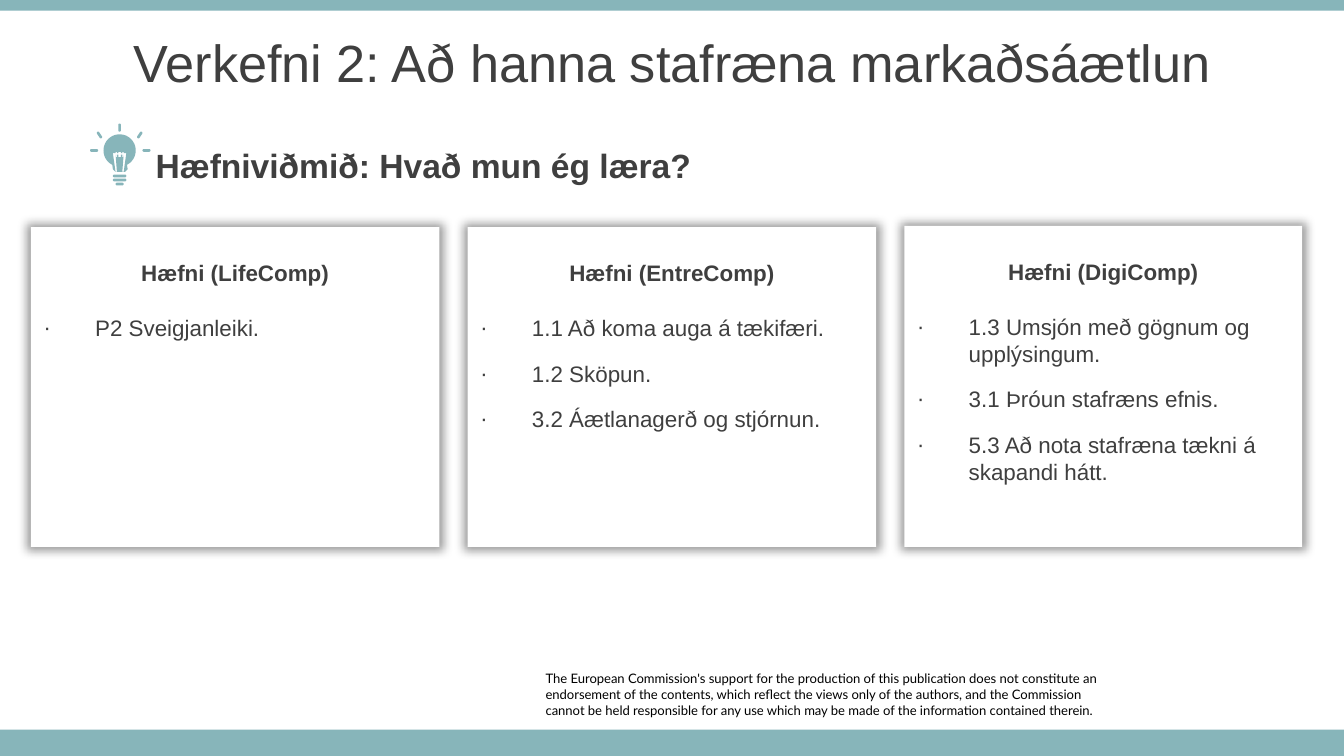
import math

from lxml import etree
from pptx import Presentation
from pptx.dml.color import RGBColor
from pptx.enum import shapes, text
from pptx.oxml.ns import qn
from pptx.util import Inches, Pt

TEAL, DARK, WHITE, BLACK = "87B5BA", "3F3F3F", "FFFFFF", "000000"
TITLE = "Verkefni 2: Að hanna stafræna markaðsáætlun"
SUBTITLE = "Hæfniviðmið: Hvað mun ég læra?"
DISCLAIMER = [
    "The European Commission's support for the production of this publication does not "
    "constitute an endorsement of the contents, which reflect the views only of the "
    "authors, and the Commission",
    "cannot be held responsible for any use which may be made of the information "
    "contained therein.",
]
CARDS = [
    ((0.23, 1.69, 3.04, 2.38), "Hæfni (LifeComp)", ["P2 Sveigjanleiki."]),
    ((3.48, 1.69, 3.04, 2.38), "Hæfni (EntreComp)",
     ["1.1 Að koma auga á tækifæri.", "1.2 Sköpun.", "3.2 Áætlanagerð og stjórnun."]),
    ((6.73, 1.68, 2.96, 2.39), "Hæfni (DigiComp)",
     ["1.3 Umsjón með gögnum og upplýsingum.", "3.1 Þróun stafræns efnis.",
      "5.3 Að nota stafræna tækni á skapandi hátt."]),
]
BARS = [(0, 5.43, 10, 0.2), (0, 0, 10, 0.08)]

# Light bulb, in slide inches
AXIS, BULB_Y, BULB_R = 0.89, 1.12, 0.12
STROKES = [  # rays, then the rings of the base
    (0.68, 1.12, 0.72, 1.12), (1.07, 1.12, 1.11, 1.12), (0.89, 0.93, 0.89, 0.97),
    (0.73, 0.99, 0.75, 1.02), (1.05, 0.99, 1.03, 1.02),
    (0.85, 1.31, 0.93, 1.31), (0.85, 1.34, 0.93, 1.34), (0.87, 1.37, 0.91, 1.37),
]
NECK = [(0.95, 1.26), (0.93, 1.28), (0.86, 1.28), (0.84, 1.26)]
FILAMENT = [  # one half: distance from the axis, height
    (0.01, 1.13), (0.01, 1.14), (0.02, 1.14), (0.02, 1.13), (0.03, 1.13), (0.03, 1.14),
    (0.05, 1.14), (0.03, 1.28), (0.02, 1.28), (0.03, 1.15), (0.03, 1.17), (0.02, 1.17),
    (0.02, 1.15), (0.01, 1.15), (0.01, 1.17),
]


def rgb(color):
    return RGBColor.from_string(color)


def box(at):
    return [Inches(v) for v in at]


def paint(sp, color):
    sp.shadow.inherit = False
    sp.fill.solid()
    sp.fill.fore_color.rgb = rgb(color)
    sp.line.fill.background()


def add_rect(at, color):
    sp = s.shapes.add_shape(shapes.MSO_SHAPE.RECTANGLE, *box(at))
    paint(sp, color)
    return sp


def style(p, size, font="Arial", color=DARK, bold=False):
    for r in p.runs:
        r.font.size, r.font.name, r.font.bold = Pt(size), font, bold
        r.font.color.rgb = rgb(color)


def add_text(at, lines, size, anchor=text.MSO_ANCHOR.MIDDLE, inset=(0.1, 0.05),
             align=text.PP_ALIGN.LEFT, **look):
    tf = s.shapes.add_textbox(*box(at)).text_frame
    tf.word_wrap = True
    tf.vertical_anchor = anchor
    tf.margin_left = tf.margin_right = Inches(inset[0])
    tf.margin_top = tf.margin_bottom = Inches(inset[1])
    tf.text = "\n".join(lines)
    for p in tf.paragraphs:
        p.alignment = align
        style(p, size, **look)


def add_glow(sp):
    """Soft shadow on all four sides, slightly larger than the shape."""
    effects = sp._element.spPr.find(qn("a:effectLst"))
    shadow = etree.SubElement(effects, qn("a:outerShdw"), blurRad=str(Pt(5)),
                              sx="102000", sy="102000", algn="ctr", rotWithShape="0")
    clr = etree.SubElement(shadow, qn("a:srgbClr"), val=BLACK)
    etree.SubElement(clr, qn("a:alpha"), val="40000")


def add_bullet(p):
    pPr = p._p.get_or_add_pPr()
    pPr.set("marL", str(Inches(0.38)))
    pPr.set("indent", str(-Inches(0.38)))
    clr = etree.SubElement(pPr, qn("a:buClr"))
    etree.SubElement(clr, qn("a:srgbClr"), val=DARK)
    etree.SubElement(pPr, qn("a:buFont"), typeface="Arial")
    etree.SubElement(pPr, qn("a:buChar"), char="∙")


def add_card(at, heading, items):
    sp = add_rect(at, WHITE)
    add_glow(sp)
    tf = sp.text_frame
    tf.word_wrap = True
    tf.vertical_anchor = text.MSO_ANCHOR.TOP
    tf.margin_top = Inches(0.24)
    tf.text = heading
    p = tf.paragraphs[0]
    p.alignment = text.PP_ALIGN.CENTER
    style(p, 12, bold=True)
    for i, item in enumerate(items):
        p = tf.add_paragraph()
        p.text = item
        add_bullet(p)
        p.alignment = text.PP_ALIGN.LEFT
        p.space_before = Pt(10 if i else 15)
        style(p, 12)


def arc(x, y, radius, start, end, steps):
    angles = [math.radians(start + (end - start) * i / steps) for i in range(steps + 1)]
    return [(x + radius * math.cos(a), y + radius * math.sin(a)) for a in angles]


def capsule(x1, y1, x2, y2, radius=0.01):
    """Outline of a stroke with round ends."""
    turn = math.degrees(math.atan2(y2 - y1, x2 - x1))
    return (arc(x2, y2, radius, turn - 90, turn + 90, 8)
            + arc(x1, y1, radius, turn + 90, turn + 270, 8))


def add_bulb():
    glass = arc(AXIS, BULB_Y, BULB_R, 117, 423, 48) + NECK
    filament = ([(AXIS - d, y) for d, y in FILAMENT]
                + [(AXIS + d, y) for d, y in reversed(FILAMENT)])
    outlines = [[(Inches(x), Inches(y)) for x, y in points]
                for points in [glass, filament] + [capsule(*k) for k in STROKES]]
    fb = s.shapes.build_freeform(*outlines[0][0])
    for i, points in enumerate(outlines):
        if i:
            fb.move_to(*points[0])
        fb.add_line_segments(points[1:], close=True)
    paint(fb.convert_to_shape(), TEAL)


prs = Presentation()
prs.slide_width = Inches(10)
prs.slide_height = prs.slide_width * 9 // 16
s = prs.slides.add_slide(prs.slide_layouts[6])

add_text((4.06, 4.99, 4.17, 0.35), DISCLAIMER, 7, anchor=text.MSO_ANCHOR.TOP,
         inset=(0, 0), font="Lato", color=BLACK)
for bar in BARS:
    add_rect(bar, TEAL)
add_text((0, 0.14, 10, 0.63), [TITLE], 28, align=text.PP_ALIGN.CENTER)
add_bulb()
add_text((1.06, 1.07, 4.88, 0.31), [SUBTITLE], 18, bold=True)
for card in CARDS:
    add_card(*card)

prs.save("out.pptx")
